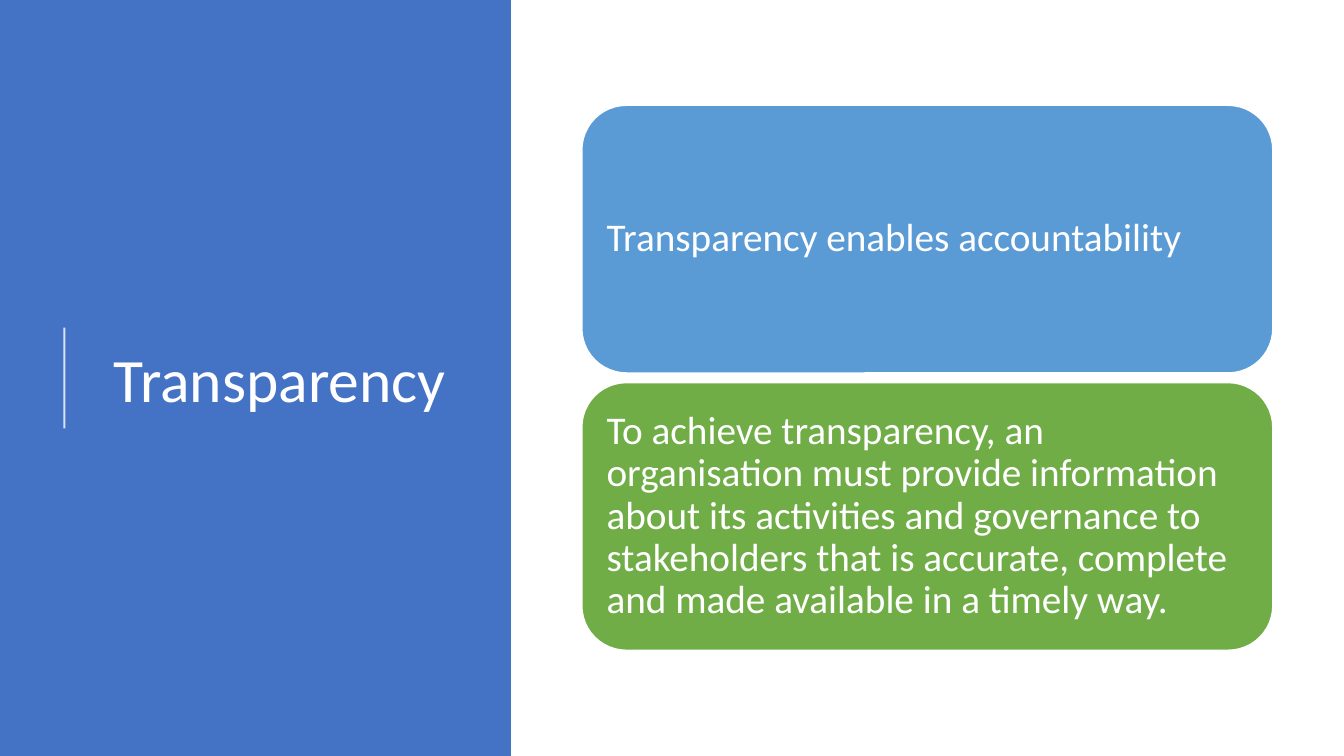
from lxml import etree
from pptx import Presentation
from pptx.dml.color import RGBColor
from pptx.enum import shapes as sh, text as tx
from pptx.oxml import ns
from pptx.util import Pt

# Content
TITLE = "Transparency"
CARDS = [
    ("Transparency enables accountability", "blue"),
    ("To achieve transparency, an organisation must provide information "
     "about its activities and governance to stakeholders that is accurate, "
     "complete and made available in a timely way.", "green"),
]
HEX = {"panel": "4472C4", "blue": "5B9BD5", "green": "70AD47", "white": "FFFFFF"}
FONT = "Calibri"

# Layout in points
WIDE, HIGH = 960, 540
PANEL = 365
LEFT, TOP, CARD_W, CARD_H, GAP = 415.6, 75.2, 493.6, 191.2, 6.9
RULE_X, RULE_H = 46, 72


def color(name):
    return RGBColor.from_string(HEX[name])


def write(shape, words, size):
    frame = shape.text_frame
    frame.text = words
    frame.word_wrap = True
    frame.auto_size = tx.MSO_AUTO_SIZE.NONE
    frame.vertical_anchor = tx.MSO_ANCHOR.MIDDLE
    para = frame.paragraphs[0]
    para.alignment = tx.PP_ALIGN.LEFT
    para.line_spacing = 0.9
    para.font.name, para.font.size = FONT, Pt(size)
    para.font.color.rgb = color("white")
    return frame


def block(kind, fill, *box):
    shape = slide.shapes.add_shape(kind, *map(Pt, box))
    shape.shadow.inherit = False
    shape.fill.solid()
    shape.fill.fore_color.rgb = color(fill)
    return shape


deck = Presentation()
deck.slide_width, deck.slide_height = Pt(WIDE), Pt(HIGH)
slide = deck.slides.add_slide(deck.slide_layouts[5])

# Side panel, placed behind the title
title = slide.shapes.title
panel = block(sh.MSO_SHAPE.RECTANGLE, "panel", 0, 0, PANEL, HIGH)
panel.line.fill.background()
title.element.addprevious(panel.element)

# Title
title.left, title.top, title.width, title.height = map(Pt, (74.2, 56.2, 265.7, 433.4))
write(title, TITLE, 44)

# Thin rule beside the title
mid = HIGH / 2
rule = slide.shapes.add_connector(
    sh.MSO_CONNECTOR.STRAIGHT,
    *map(Pt, (RULE_X, mid + RULE_H / 2, RULE_X, mid - RULE_H / 2)))
rule.line.width = Pt(1.5)
rule.line.color.rgb = color("white")
tint = rule.element.spPr.find(".//" + ns.qn("a:srgbClr"))
etree.SubElement(tint, ns.qn("a:alpha"), val="80000")
etree.SubElement(rule.element.spPr, ns.qn("a:effectLst"))

# Cards
for i, (words, fill) in enumerate(CARDS):
    card = block(sh.MSO_SHAPE.ROUNDED_RECTANGLE, fill,
                 LEFT, TOP + i * (CARD_H + GAP), CARD_W, CARD_H)
    card.line.color.rgb = color("white")
    card.line.width = Pt(1)
    frame = write(card, words, 28)
    frame.margin_left = frame.margin_right = Pt(8.4)
    frame.margin_top = frame.margin_bottom = Pt(8.4)

deck.save("out.pptx")
